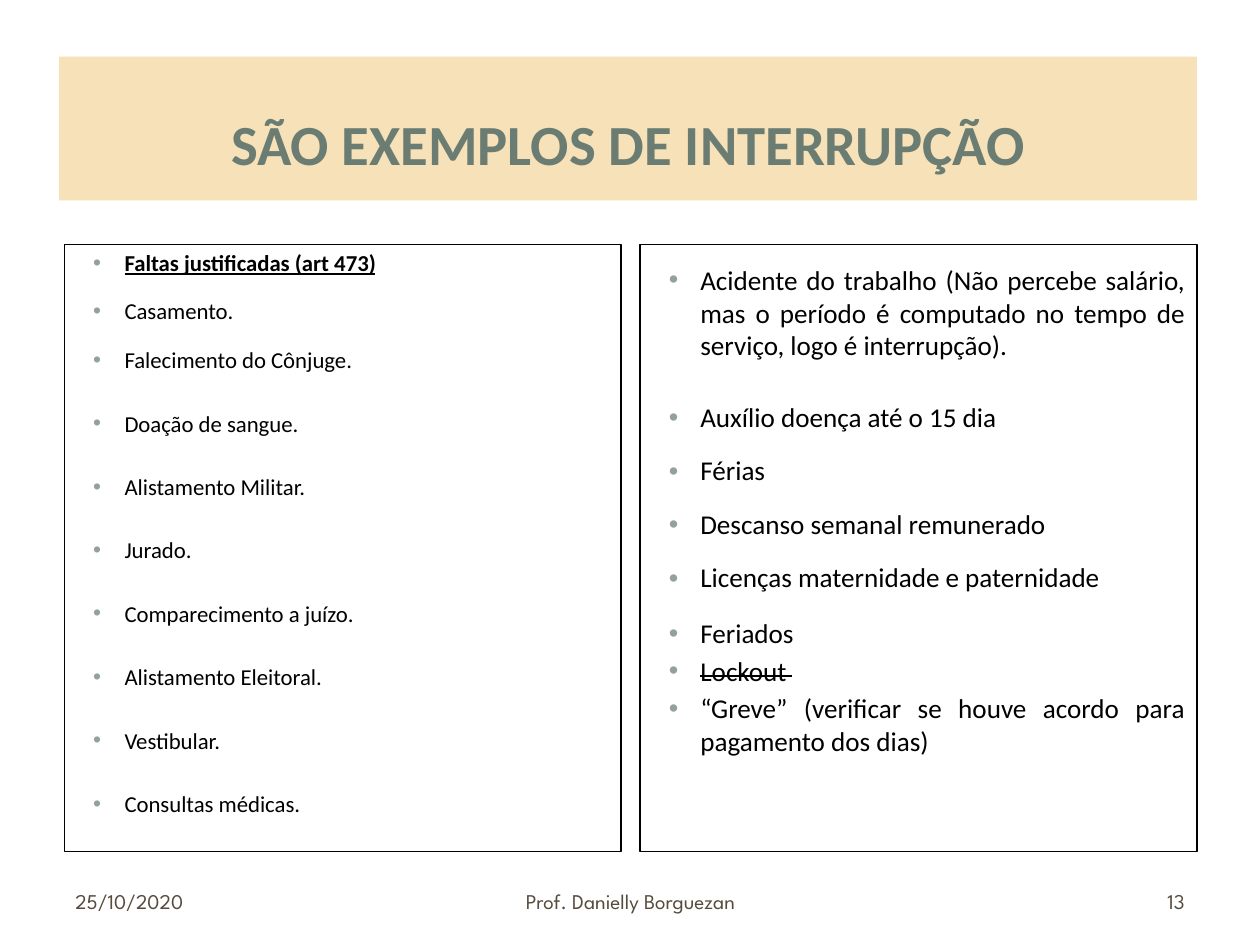
from lxml import etree
from pptx import Presentation
from pptx import util as u
from pptx.dml.color import RGBColor
from pptx.enum import text
from pptx.oxml import ns

ALIGN = text.PP_ALIGN


def color(value):
    return RGBColor.from_string(value)


class SlideBuilder:
    font = "Calibri"
    footer_font = "League Spartan"
    ink = "000000"
    title_ink = "6B7D72"
    title_fill = "F6E1B8"
    bullet_ink = "93A299"
    footer_ink = "564B3C"

    def __init__(self, presentation):
        self.slide = presentation.slides.add_slide(presentation.slide_layouts[5])

    def place(self, shape, left, top, width, height):
        shape.left, shape.top = u.Inches(left), u.Inches(top)
        shape.width, shape.height = u.Inches(width), u.Inches(height)

    def add_run(self, paragraph, content, size, ink, name=None, bold=False):
        run = paragraph.add_run()
        run.text = content
        run.font.name = name or self.font
        run.font.size = u.Pt(size)
        run.font.bold = bold
        run.font.color.rgb = color(ink)
        return run

    def add_title(self, content):
        shape = self.slide.shapes.title
        self.place(shape, 0.47, 0.45, 9.03, 1.14)
        shape.fill.solid()
        shape.fill.fore_color.rgb = color(self.title_fill)
        frame = shape.text_frame
        frame.auto_size = text.MSO_AUTO_SIZE.NONE
        frame.vertical_anchor = text.MSO_ANCHOR.MIDDLE
        frame.margin_top = u.Inches(0.27)
        paragraph = frame.paragraphs[0]
        paragraph.alignment = ALIGN.CENTER
        self.add_run(paragraph, content, 32.4, self.title_ink, bold=True)

    def add_text_box(self, left, top, width, height):
        shape = self.slide.shapes.add_textbox(0, 0, 0, 0)
        self.place(shape, left, top, width, height)
        shape.text_frame.word_wrap = True
        return shape

    def add_bullet(self, paragraph):
        properties = paragraph._p.get_or_add_pPr()
        properties.set("marL", str(u.Inches(0.38)))
        properties.set("indent", str(u.Inches(-0.25)))
        bullet_color = etree.SubElement(properties, ns.qn("a:buClr"))
        etree.SubElement(bullet_color, ns.qn("a:srgbClr"), val=self.bullet_ink)
        etree.SubElement(properties, ns.qn("a:buFont"), typeface="Arial")
        etree.SubElement(properties, ns.qn("a:buChar"), char="•")

    def add_list(self, left, size, items, margin_top=0.05):
        """Each item is (text, space before in points, line spacing)."""
        shape = self.add_text_box(left, 1.94, 4.42, 4.82)
        shape.line.color.rgb = color(self.ink)
        shape.line.width = u.Pt(0.75)
        frame = shape.text_frame
        frame.margin_top = u.Inches(margin_top)
        runs = []
        for index, (content, before, spacing) in enumerate(items):
            paragraph = frame.add_paragraph() if index else frame.paragraphs[0]
            self.add_bullet(paragraph)
            paragraph.alignment = ALIGN.JUSTIFY
            paragraph.space_before = u.Pt(before)
            paragraph.line_spacing = spacing
            runs.append(self.add_run(paragraph, content, size, self.ink))
        return runs

    def add_footer(self, content, left, width, alignment):
        frame = self.add_text_box(left, 6.95, width, 0.4).text_frame
        frame.vertical_anchor = text.MSO_ANCHOR.MIDDLE
        paragraph = frame.paragraphs[0]
        paragraph.alignment = alignment
        self.add_run(paragraph, content, 12, self.footer_ink, self.footer_font)


def main():
    presentation = Presentation()
    presentation.slide_width = u.Inches(10)
    presentation.slide_height = u.Inches(7.5)
    builder = SlideBuilder(presentation)

    builder.add_title("SÃO EXEMPLOS DE INTERRUPÇÃO")

    # Left column: justified absences
    absences = ["Doação de sangue.", "Alistamento Militar.", "Jurado.",
                "Comparecimento a juízo.", "Alistamento Eleitoral.",
                "Vestibular.", "Consultas médicas."]
    heading, *_ = builder.add_list(0.51, 13, [
        ("Faltas justificadas (art 473)", 0, 0.95),
        ("Casamento.", 12.4, 0.95),
        ("Falecimento do Cônjuge.", 12.4, 1.0),
        *[(absence, 20.6, 1.0) for absence in absences],
    ])
    heading.font.bold = True
    heading.font.underline = True

    # Right column: other cases
    cases = builder.add_list(5.08, 15.5, [
        ("Acidente do trabalho (Não percebe salário, mas o período é computado "
         "no tempo de serviço, logo é interrupção).", 0, 1.0),
        ("Auxílio doença até o 15 dia", 23.8, 0.95),
        ("Férias", 12.9, 0.95),
        ("Descanso semanal remunerado", 12.9, 0.95),
        ("Licenças maternidade e paternidade", 12.9, 0.95),
        ("Feriados", 13, 1.0),
        ("Lockout ", 2.8, 1.0),
        ("“Greve” (verificar se houve acordo para pagamento dos dias)", 2.8, 1.0),
    ], margin_top=0.15)
    lockout = cases[-2]
    lockout._r.get_or_add_rPr().set("strike", "sngStrike")

    # Footer
    builder.add_footer("25/10/2020", 0.5, 2.33, ALIGN.LEFT)
    builder.add_footer("Prof. Danielly Borguezan", 3.42, 3.17, ALIGN.CENTER)
    builder.add_footer("13", 7.17, 2.33, ALIGN.RIGHT)

    presentation.save("out.pptx")


if __name__ == "__main__":
    main()
